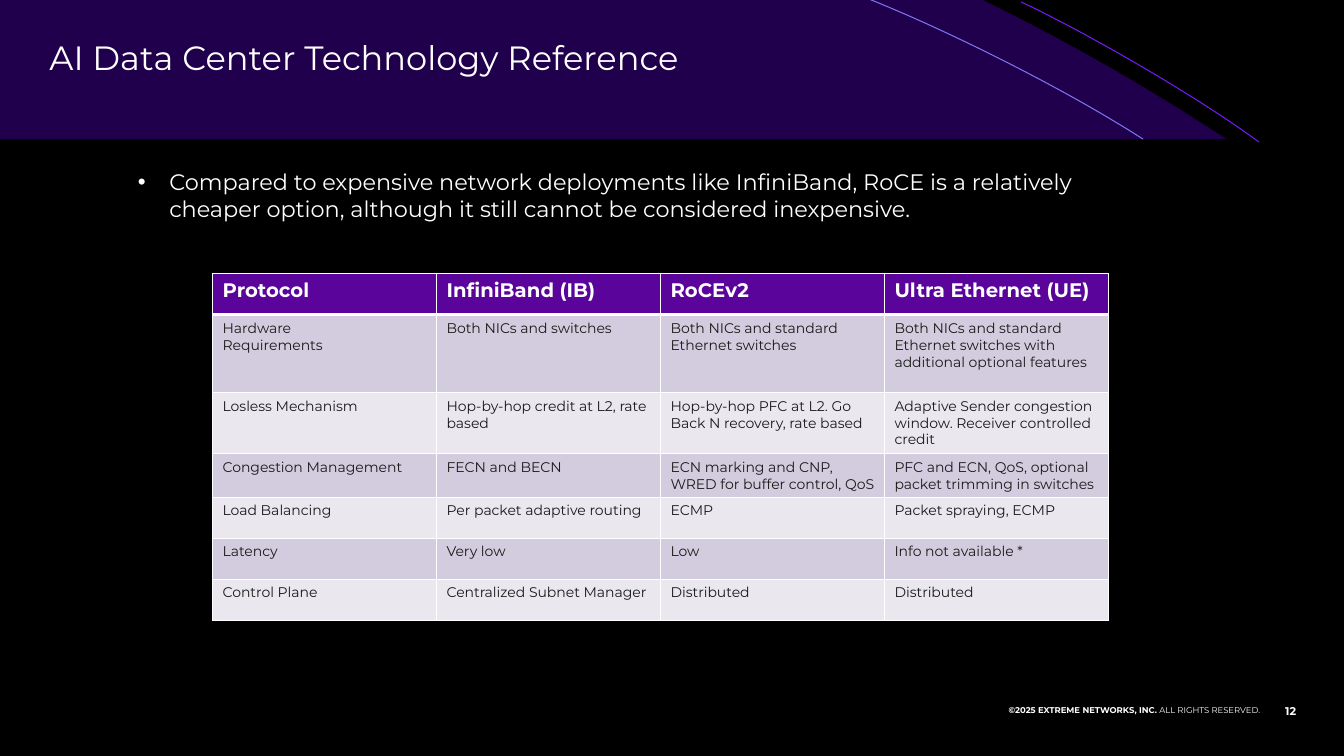
import pptx
import pptx.util
import pptx.dml.color
import pptx.enum.text
import pptx.oxml
import pptx.oxml.ns

Pt = pptx.util.Pt
Align = pptx.enum.text.PP_ALIGN
Anchor = pptx.enum.text.MSO_ANCHOR

# Content
TITLE = "AI Data Center Technology Reference"
BULLET = ("Compared to expensive network deployments like InfiniBand, RoCE is a relatively "
          "cheaper option, although it still cannot be considered inexpensive.")
COPYRIGHT = ["©2025 EXTREME NETWORKS, INC. ", "ALL RIGHTS RESERVED."]
PAGE_NUMBER = "12"
PROTOCOLS = [
    ("Protocol", "InfiniBand (IB)", "RoCEv2", "Ultra Ethernet (UE)"),
    ("Hardware\nRequirements", "Both NICs and switches",
     "Both NICs and standard Ethernet switches",
     "Both NICs and standard Ethernet switches with additional optional features"),
    ("Losless Mechanism", "Hop-by-hop credit at L2, rate based",
     "Hop-by-hop PFC at L2. Go Back N recovery, rate based",
     "Adaptive Sender congestion window. Receiver controlled credit"),
    ("Congestion Management", "FECN and BECN",
     "ECN marking and CNP, WRED for buffer control, QoS",
     "PFC and ECN, QoS, optional packet trimming in switches"),
    ("Load Balancing", "Per packet adaptive routing", "ECMP", "Packet spraying, ECMP"),
    ("Latency", "Very low", "Low", "Info not available *"),
    ("Control Plane", "Centralized Subnet Manager", "Distributed", "Distributed"),
]
ROW_HEIGHTS = [29.2, 55.7, 43.6, 31.4, 29.2, 29.2, 29.2]
COLUMN_WIDTH = 160

# Header curves: Bezier start, two controls, end
BAND_EDGE = [(702, 0), (762.5, 29.5), (820, 62.6), (876.2, 99.4)]
ARCS = [
    ("outer", [(729.4, 1.4), (779.8, 25.2), (857.5, 70.6), (899.3, 101.5)]),
    ("inner", [(620.6, -0.7), (673.2, 20.2), (758.2, 61.9), (816.5, 99.4)]),
]

THEME = {
    "font": "Montserrat",
    "color": {"back": "000000", "light": "FFFFFF", "dark": "1A1A1A", "band": "20004C",
              "outer": "7519F9", "inner": "7D76F2", "head": "5B049C",
              "odd": "D2CCDE", "even": "EAE7EF"},
    "size": {"title": 24, "bullet": 16, "head": 14, "cell": 10, "number": 8, "legal": 6},
}


def color(name):
    return pptx.dml.color.RGBColor.from_string(THEME["color"][name])


def style(span, size, tint="light", bold=False):
    span.font.name = THEME["font"]
    span.font.size = Pt(THEME["size"][size])
    span.font.color.rgb = color(tint)
    span.font.bold = bold


def add_text(page, place, spans, size, bolds=(False,), align=Align.LEFT,
             anchor=Anchor.MIDDLE, inset=(0, 0)):
    box = page.shapes.add_textbox(*map(Pt, place))
    frame = box.text_frame
    frame.word_wrap = True
    frame.vertical_anchor = anchor
    frame.margin_left = frame.margin_right = Pt(inset[0])
    frame.margin_top = frame.margin_bottom = Pt(inset[1])
    para = frame.paragraphs[0]
    para.alignment = align
    for words, bold in zip(spans, bolds):
        span = para.add_run()
        span.text = words
        style(span, size, bold=bold)
    return para


def curve_points(controls, steps=24):
    for step in range(steps + 1):
        t = step / steps
        weights = ((1 - t) ** 3, 3 * t * (1 - t) ** 2, 3 * t * t * (1 - t), t ** 3)
        yield tuple(Pt(sum(w * point[axis] for w, point in zip(weights, controls)))
                    for axis in (0, 1))


def add_outline(page, points, close):
    builder = page.shapes.build_freeform(*points[0])
    builder.add_line_segments(points[1:], close=close)
    shape = builder.convert_to_shape()
    shape.shadow.inherit = False
    return shape


def add_borders(cell, widths):
    properties = cell._tc.get_or_add_tcPr()
    for side, width in widths.items():
        properties.append(pptx.oxml.parse_xml(
            f'<a:ln{side} {pptx.oxml.ns.nsdecls("a")} w="{Pt(width)}"><a:solidFill>'
            f'<a:srgbClr val="{THEME["color"]["light"]}"/></a:solidFill></a:ln{side}>'))


# Page
deck = pptx.Presentation()
deck.slide_width, deck.slide_height = Pt(960), Pt(540)
page = deck.slides.add_slide(deck.slide_layouts[6])
page.background.fill.solid()
page.background.fill.fore_color.rgb = color("back")

# Header band and arcs
band = add_outline(page, [(0, 0), *curve_points(BAND_EDGE), (0, Pt(BAND_EDGE[-1][1]))], True)
band.fill.solid()
band.fill.fore_color.rgb = color("band")
band.line.fill.background()
for tint, controls in ARCS:
    arc = add_outline(page, list(curve_points(controls)), False)
    arc.fill.background()
    arc.line.color.rgb = color(tint)
    arc.line.width = Pt(0.75)

# Title and bullet
title = add_text(page, (35.3, 33.1, 846, 19.4), [TITLE], "title")
title.line_spacing = 0.9
bullet = add_text(page, (91.4, 116.6, 734.4, 70.6), [BULLET], "bullet",
                  anchor=Anchor.TOP, inset=(7.2, 3.6))
bullet_properties = bullet._p.get_or_add_pPr()
bullet_properties.set("marL", str(Pt(22.5)))
bullet_properties.set("indent", str(Pt(-22.5)))
bullet_properties.append(pptx.oxml.parse_xml(
    f'<a:buFont {pptx.oxml.ns.nsdecls("a")} typeface="Arial"/>'))
bullet_properties.append(pptx.oxml.parse_xml(
    f'<a:buChar {pptx.oxml.ns.nsdecls("a")} char="•"/>'))

# Protocol table
columns = len(PROTOCOLS[0])
table = page.shapes.add_table(len(PROTOCOLS), columns, Pt(151.8), Pt(195.5),
                              Pt(COLUMN_WIDTH * columns), Pt(sum(ROW_HEIGHTS))).table
for column in table.columns:
    column.width = Pt(COLUMN_WIDTH)
for row, (values, height) in enumerate(zip(PROTOCOLS, ROW_HEIGHTS)):
    table.rows[row].height = Pt(height)
    is_head = row == 0
    fill = "head" if is_head else ("even", "odd")[row % 2]
    widths = {"L": 1, "R": 1, "T": 3 if row == 1 else 1, "B": 3 if is_head else 1}
    for column, value in enumerate(values):
        cell = table.cell(row, column)
        add_borders(cell, widths)
        cell.fill.solid()
        cell.fill.fore_color.rgb = color(fill)
        cell.text_frame.text = value
        for para in cell.text_frame.paragraphs:
            for span in para.runs:
                style(span, "head" if is_head else "cell",
                      "light" if is_head else "dark", is_head)

# Footer
add_text(page, (540, 504, 360, 7.2), COPYRIGHT, "legal", (True, False),
         Align.RIGHT, Anchor.BOTTOM)
add_text(page, (904.3, 504, 21.6, 7.2), [PAGE_NUMBER], "number", (True,), Align.RIGHT)

deck.save("out.pptx")
